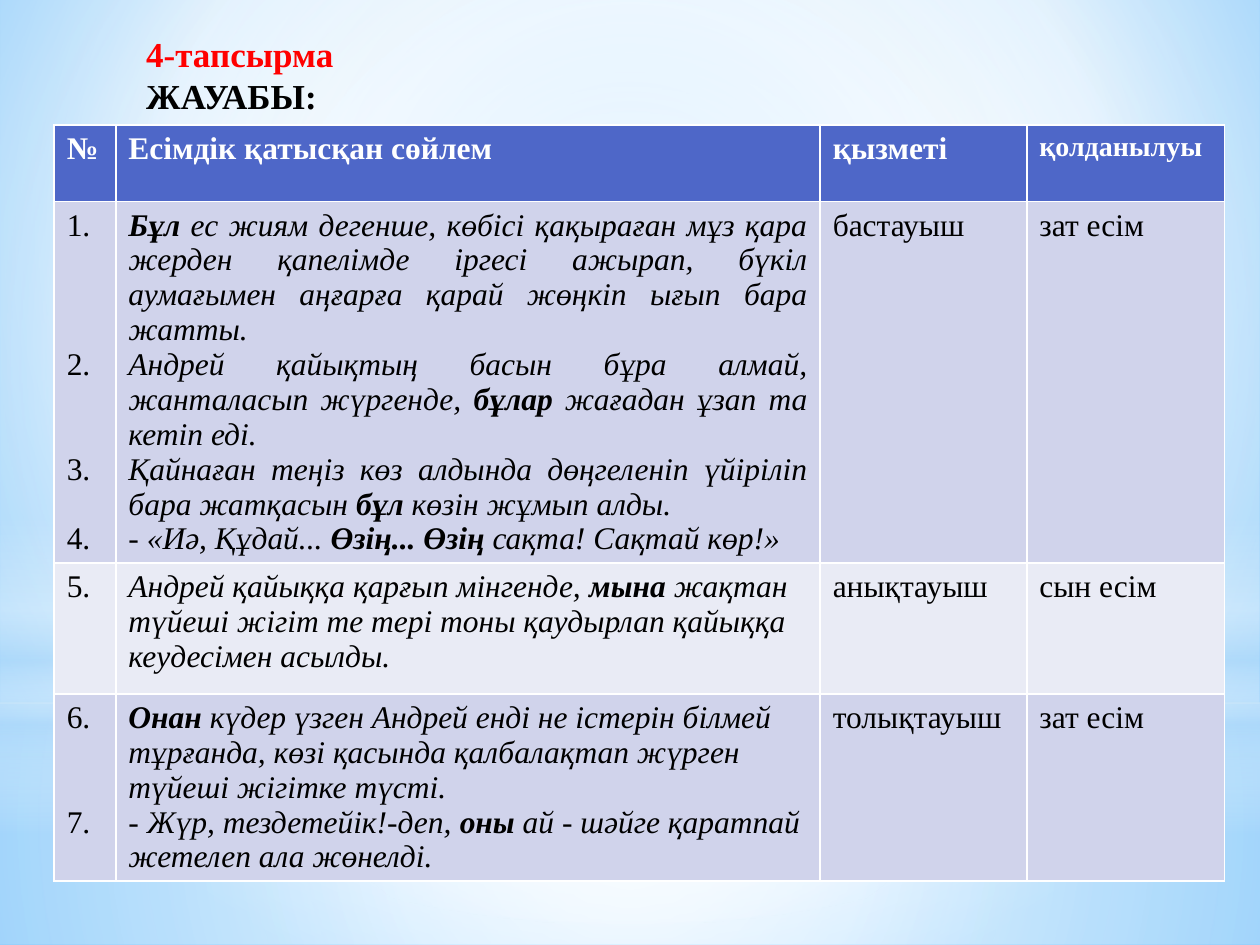
from lxml import etree
from pptx import Presentation
from pptx.dml.color import RGBColor
from pptx.enum import shapes, text
from pptx.oxml import parse_xml
from pptx.oxml.ns import nsdecls, qn
from pptx.util import Inches, Pt

COLORS = {
    "red": "FF0000", "black": "000000", "white": "FFFFFF", "header": "4E67C8",
    "band": "D0D3EB", "light": "E9EBF5", "haze": "B4DCFA",
    "sky": "9ED5FF", "edge": "5BB9FF",
}
FONT = "Times New Roman"
LINE = 19.93  # height in points of one 18 pt line


def gradient(stops, center=None):
    """Gradient fill from (position, colour, alpha) stops, in percent.

    center gives the left, top, right, bottom insets of a circular gradient;
    without it the gradient runs from top to bottom.
    """
    fill = parse_xml(f'<a:gradFill {nsdecls("a")} rotWithShape="1"/>')
    stop_list = etree.SubElement(fill, qn("a:gsLst"))
    for position, color, alpha in stops:
        stop = etree.SubElement(stop_list, qn("a:gs"), pos=str(position * 1000))
        rgb = etree.SubElement(stop, qn("a:srgbClr"), val=COLORS[color])
        etree.SubElement(rgb, qn("a:alpha"), val=str(alpha * 1000))
    if center:
        circle = etree.SubElement(fill, qn("a:path"), path="circle")
        insets = {side: str(v * 1000) for side, v in zip("ltrb", center)}
        etree.SubElement(circle, qn("a:fillToRect"), **insets)
    else:
        etree.SubElement(fill, qn("a:lin"), ang="5400000", scaled="0")
    return fill


def add_run(paragraph, content, **formats):
    run = paragraph.add_run()
    run.text = content
    color = formats.pop("color", "black")
    for name, value in {"name": FONT, "size": Pt(18), **formats}.items():
        setattr(run.font, name, value)
    run.font.color.rgb = RGBColor.from_string(COLORS[color])


prs = Presentation()
prs.slide_width, prs.slide_height = Inches(10), Inches(7.5)
slide = prs.slides.add_slide(prs.slide_layouts[5])

# Background
slide.background.fill.solid()
solid = slide.background._cSld.bg.bgPr.find(qn("a:solidFill"))
solid.getparent().replace(solid, gradient(
    [(0, "sky", 100), (60, "white", 100), (100, "edge", 100)], (20, 10, 20, 60)))

RECT, OVAL = shapes.MSO_SHAPE.RECTANGLE, shapes.MSO_SHAPE.OVAL
MIDDLE = (50, 50, 50, 50)
glows = [
    (RECT, 5.58, 1.92, MIDDLE,
     [(0, "white", 91), (37, "white", 76), (100, "haze", 79)]),
    (RECT, 0, 5.58, MIDDLE,
     [(0, "white", 89), (48, "white", 62), (100, "haze", 79)]),
    (RECT, 4.12, 2.5, None,
     [(0, "white", 0), (29, "white", 30), (45, "haze", 40),
      (55, "white", 26), (65, "haze", 60), (100, "white", 0)]),
    (OVAL, 1.75, 5.58, MIDDLE, [(0, "white", 100), (56, "white", 0)]),
]
for preset, top, height, center, stops in glows:
    glow = slide.shapes.add_shape(preset, 0, Inches(top), Inches(10), Inches(height))
    glow.shadow.inherit = False
    glow.line.fill.background()
    glow.fill.solid()
    solid = glow._element.spPr.find(qn("a:solidFill"))
    solid.getparent().replace(solid, gradient(stops, center))

# Title, brought in front of the glows
title = slide.shapes.title
slide.shapes._spTree.append(title._element)
title.left, title.top = Inches(1.06), Inches(0.21)
title.width, title.height = Inches(8.43), Inches(1.64)
frame = title.text_frame
frame.vertical_anchor = text.MSO_ANCHOR.TOP
frame.auto_size = text.MSO_AUTO_SIZE.NONE
heading = frame.paragraphs[0]
heading.alignment = text.PP_ALIGN.LEFT
heading.line_spacing = Pt(24)
add_run(heading, "4-тапсырма", size=Pt(20), bold=True, color="red")
heading.add_line_break()
add_run(heading, "ЖАУАБЫ:", size=Pt(20), bold=True)

# Answer table: asterisks enclose the bold pronouns
headers = ["№", "Есімдік қатысқан сөйлем", "қызметі", "қолданылуы"]
# Each number comes with the count of text lines to skip above it
answers = [
    ([("1.", 0), ("2.", 3), ("3.", 2), ("4.", 1)],
     ["*Бұл* ес жиям дегенше, көбісі қақыраған мұз қара жерден қапелімде іргесі "
      "ажырап, бүкіл аумағымен аңғарға қарай жөңкіп ығып бара жатты.",
      "Андрей қайықтың басын бұра алмай, жанталасып жүргенде, *бұлар* жағадан "
      "ұзап та кетіп еді.",
      "Қайнаған теңіз көз алдында дөңгеленіп үйіріліп бара жатқасын *бұл* көзін "
      "жұмып алды.",
      "- «Иә, Құдай... *Өзің... Өзің *сақта! Сақтай көр!»"],
     "бастауыш", "зат есім"),
    ([("5.", 0)],
     ["Андрей қайыққа қарғып мінгенде, *мына *жақтан түйеші жігіт те тері тоны "
      "қаудырлап қайыққа кеудесімен асылды."],
     "анықтауыш", "сын есім"),
    ([("6.", 0), ("7.", 2)],
     ["*Онан* күдер үзген Андрей енді не істерін білмей тұрғанда, көзі қасында "
      "қалбалақтап жүрген түйеші жігітке түсті.",
      "- Жүр, тездетейік!-деп, *оны *ай - шәйге қаратпай жетелеп ала жөнелді."],
     "толықтауыш", "зат есім"),
]
column_widths = [0.49, 5.59, 1.64, 1.57]
row_heights = [0.61, 2.85, 1.04, 1.07]
table = slide.shapes.add_table(
    len(row_heights), len(column_widths), Inches(0.43), Inches(0.99),
    Inches(sum(column_widths)), Inches(sum(row_heights))).table
for column, width in zip(table.columns, column_widths):
    column.width = Inches(width)
row_fills = ["header", "band", "light", "band"]
for row, height, color in zip(table.rows, row_heights, row_fills):
    row.height = Inches(height)
    for cell in row.cells:
        cell.fill.solid()
        cell.fill.fore_color.rgb = RGBColor.from_string(COLORS[color])

for column, header in enumerate(headers):
    add_run(table.cell(0, column).text_frame.paragraphs[0], header, bold=True,
            color="white", size=Pt(16 if column == 3 else 18))

for row, (numbers, sentences, role, usage) in enumerate(answers, start=1):
    columns = [numbers, [(s, 0) for s in sentences], [(role, 0)], [(usage, 0)]]
    for column, entries in enumerate(columns):
        frame = table.cell(row, column).text_frame
        for index, (entry, skipped) in enumerate(entries):
            paragraph = frame.add_paragraph() if index else frame.paragraphs[0]
            if skipped:
                paragraph.space_before = Pt(skipped * LINE)
            if row == 1 and column == 1:
                paragraph.alignment = text.PP_ALIGN.JUSTIFY
            for part, content in enumerate(entry.split("*")):
                if content:
                    add_run(paragraph, content, bold=part % 2 == 1, italic=column == 1)

prs.save("out.pptx")
